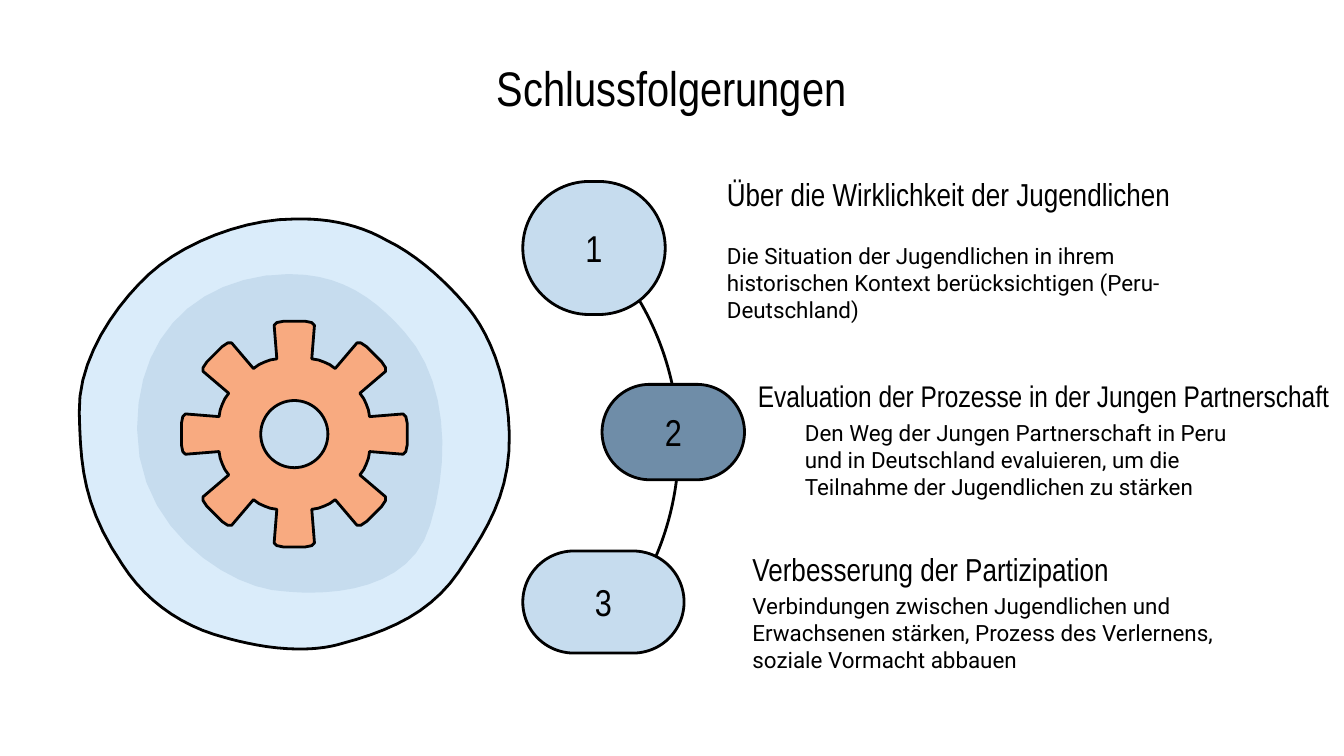
from math import cos, radians, sin

from pptx import Presentation
from pptx.dml.color import RGBColor
from pptx.enum.shapes import MSO_SHAPE
from pptx.enum.text import MSO_ANCHOR, PP_ALIGN
from pptx.util import Inches, Pt

ARC, PILL = MSO_SHAPE.ARC, MSO_SHAPE.ROUNDED_RECTANGLE
TOP, MIDDLE = MSO_ANCHOR.TOP, MSO_ANCHOR.MIDDLE
LEFT, CENTER = PP_ALIGN.LEFT, PP_ALIGN.CENTER
HEADING_FONT, BODY_FONT = "Arial Narrow", "Roboto"
BLACK, PALE, LIGHT, SLATE, ORANGE = "000000", "DAECFA", "C6DCEE", "6F8DA8", "F8AA80"

TITLE = "Schlussfolgerungen"
STEPS = [
    {"number": "1", "pill": (3.89, 1.35, 1.06, 0.99), "fill": LIGHT,
     "heading": "Über die Wirklichkeit der Jugendlichen",
     "heading_at": (5.31, 1.19, 3.61, 0.51), "heading_size": 17,
     "body": "Die Situation der Jugendlichen in ihrem historischen Kontext "
             "berücksichtigen (Peru-Deutschland)",
     "body_at": (5.31, 1.81, 3.61, 0.58)},
    {"number": "2", "pill": (4.48, 2.86, 1.06, 0.71), "fill": SLATE,
     "heading": "Evaluation der Prozesse in der Jungen Partnerschaft",
     "heading_at": (5.54, 2.76, 4.61, 0.37), "heading_size": 16,
     "body": "Den Weg der Jungen Partnerschaft in Peru und in Deutschland "
             "evaluieren, um die Teilnahme der Jugendlichen zu stärken",
     "body_at": (5.89, 3.21, 3.61, 0.42)},
    {"number": "3", "pill": (3.89, 4.1, 1.2, 0.76), "fill": LIGHT,
     "heading": "Verbesserung der Partizipation",
     "heading_at": (5.5, 4.03, 4.09, 0.4), "heading_size": 17,
     "body": "Verbindungen zwischen Jugendlichen und Erwachsenen stärken, "
             "Prozess des Verlernens, soziale Vormacht abbauen",
     "body_at": (5.5, 4.48, 4.09, 0.45)},
]

OUTER_BLOB = [
    (2.25, 1.63), (2.23, 1.63), (2.21, 1.63), (2.19, 1.63), (1.81, 1.63), (1.36, 1.81),
    (1.11, 2.04), (0.86, 2.27), (0.58, 2.67), (0.59, 3.07), (0.6, 3.47), (0.62, 3.77),
    (0.91, 4.2), (1.07, 4.45), (1.31, 4.63), (1.59, 4.72), (1.69, 4.75), (1.95, 4.83),
    (2.23, 4.83), (2.33, 4.83), (2.44, 4.82), (2.54, 4.79), (2.92, 4.69), (3.21, 4.55),
    (3.41, 4.26), (3.61, 3.96), (3.8, 3.68), (3.79, 3.23), (3.78, 2.78), (3.62, 2.46),
    (3.49, 2.3), (3.36, 2.14), (3.13, 1.91), (2.88, 1.79), (2.69, 1.68), (2.47, 1.63),
    (2.25, 1.63),
]
INNER_BLOB = [
    (2.16, 2.04), (2.1, 2.04), (2.04, 2.05), (1.98, 2.05), (1.41, 2.13), (1.02, 2.53),
    (1.02, 3.19), (1.02, 3.92), (1.66, 4.33), (2.02, 4.39), (2.11, 4.4), (2.2, 4.41),
    (2.31, 4.41), (2.66, 4.41), (3.08, 4.31), (3.2, 3.91), (3.36, 3.4), (3.32, 2.81),
    (3.01, 2.47), (2.79, 2.22), (2.54, 2.04), (2.16, 2.04),
]
GEAR_CENTER = (2.19, 3.23)
TEETH, ROOT_RADIUS, HOLE_RADIUS = 8, 0.58, 0.25
TOOTH = [(0.56, -0.13), (0.81, -0.15), (0.83, -0.13), (0.84, -0.08),
         (0.84, 0.08), (0.83, 0.13), (0.81, 0.15), (0.56, 0.13)]
ARC_BOX, ARC_ANGLES = (0.81, 1.19, 4.24, 4.24), (323.78, 34.02)


def color(value):
    return RGBColor.from_string(value)


def inches(values):
    return [Inches(value) for value in values]


def curve(points, steps=10):
    result = [points[0]]
    for i in range(0, len(points) - 1, 3):
        a, b, c, d = points[i:i + 4]
        for step in range(1, steps + 1):
            t = step / steps
            u = 1 - t
            result.append(tuple(
                u**3 * a[k] + 3 * u * u * t * b[k] + 3 * u * t * t * c[k] + t**3 * d[k]
                for k in (0, 1)))
    return result


def gear_point(radius, offset, degrees):
    angle = radians(degrees)
    return (GEAR_CENTER[0] + radius * cos(angle) - offset * sin(angle),
            GEAR_CENTER[1] + radius * sin(angle) + offset * cos(angle))


def gear_outline():
    pitch = 360 / TEETH
    outline = []
    for tooth in range(TEETH):
        outline += [gear_point(r, offset, tooth * pitch) for r, offset in TOOTH]
        outline += [gear_point(ROOT_RADIUS, 0, (tooth + part) * pitch)
                    for part in (0.4, 0.5, 0.6)]
    return outline


def style(shape, fill=None, line=BLACK):
    shape.shadow.inherit = False
    if fill:
        shape.fill.solid()
        shape.fill.fore_color.rgb = color(fill)
    else:
        shape.fill.background()
    if line:
        shape.line.color.rgb = color(line)
        shape.line.width = Pt(1.5)
    else:
        shape.line.fill.background()


def add_outline(page, contours, fill, line=BLACK):
    builder = page.shapes.build_freeform(*inches(contours[0][0]))
    for index, contour in enumerate(contours):
        if index:
            builder.move_to(*inches(contour[0]))
        builder.add_line_segments([inches(point) for point in contour[1:]], close=True)
    style(builder.convert_to_shape(), fill, line)


def write(shape, text, size, font=HEADING_FONT, align=LEFT, anchor=MIDDLE):
    frame = shape.text_frame
    frame.word_wrap = True
    frame.vertical_anchor = anchor
    frame.margin_left = frame.margin_right = Inches(0.1)
    frame.margin_top = frame.margin_bottom = Inches(0.1)
    para = frame.paragraphs[0]
    para.text = text
    para.alignment = align
    para.font.size = Pt(size)
    para.font.name = font
    para.font.color.rgb = color(BLACK)


def add_text(page, place, *args, **options):
    write(page.shapes.add_textbox(*inches(place)), *args, **options)


deck = Presentation()
deck.slide_width = Inches(10)
deck.slide_height = deck.slide_width * 9 // 16
page = deck.slides.add_slide(deck.slide_layouts[6])

hole = [gear_point(HOLE_RADIUS, 0, degrees) for degrees in range(0, 360, 6)]
add_outline(page, [curve(OUTER_BLOB)], PALE)
add_outline(page, [curve(INNER_BLOB)], LIGHT, line=None)
add_outline(page, [gear_outline(), hole], ORANGE)

add_text(page, (0.5, 0.33, 9, 0.63), TITLE, 26, align=CENTER, anchor=TOP)

arc = page.shapes.add_shape(ARC, *inches(ARC_BOX))
for index, degrees in enumerate(ARC_ANGLES):
    arc.adjustments[index] = degrees * 0.6
style(arc)

for step in STEPS:
    pill = page.shapes.add_shape(PILL, *inches(step["pill"]))
    pill.adjustments[0] = 0.5
    style(pill, step["fill"])
    write(pill, step["number"], 20, align=CENTER)
    add_text(page, step["heading_at"], step["heading"], step["heading_size"])
    add_text(page, step["body_at"], step["body"], 12, font=BODY_FONT)

deck.save("out.pptx")
